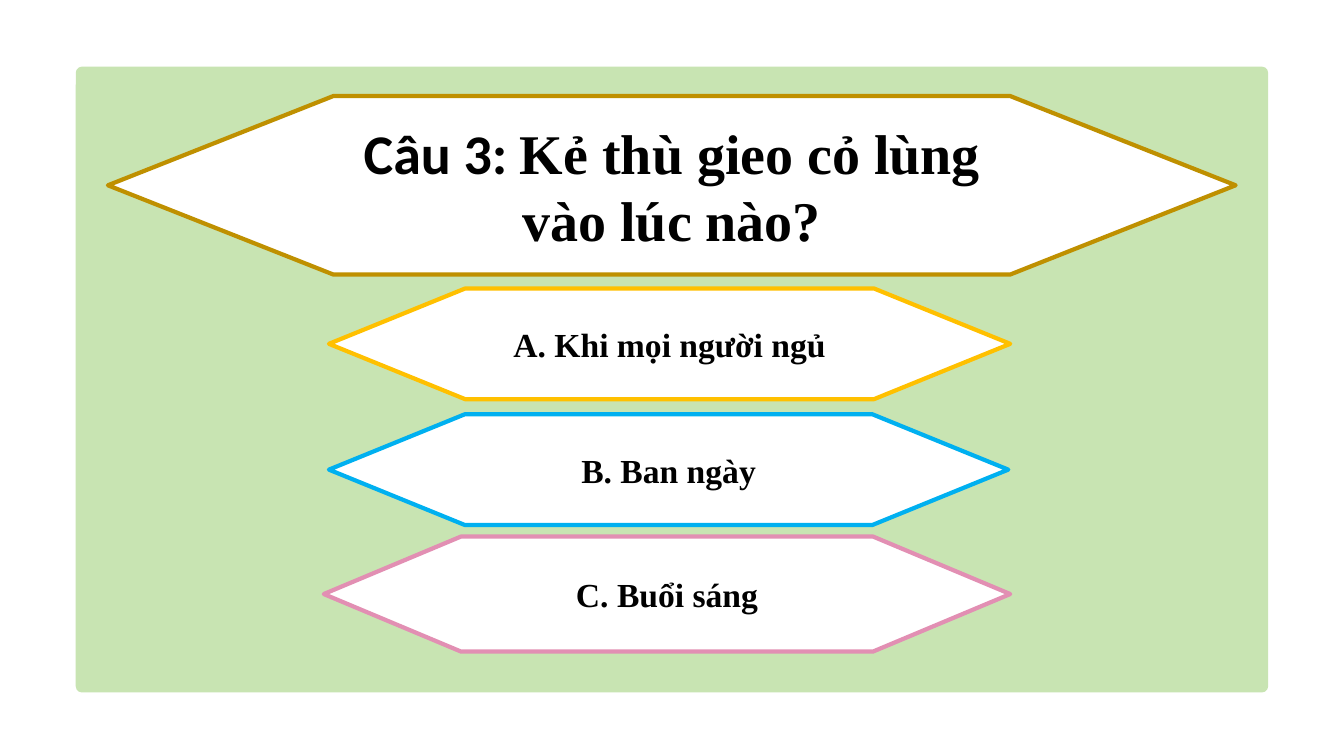
from pptx import Presentation
from pptx.dml.color import RGBColor
from pptx.enum.shapes import MSO_SHAPE
from pptx.enum.text import MSO_ANCHOR, MSO_AUTO_SIZE, PP_ALIGN
from pptx.util import Cm, Pt

COLORS = {
    "panel": "C8E4B2", "white": "FFFFFF", "text": "000000",
    "question": "BF9000", "a": "FFC000", "b": "00B0F0", "c": "E28FB3",
}
SERIF = "Times New Roman"
PANEL = (1.91, 1.68, 30.05, 15.77)
QUESTION = [("Câu 3: ", "Calibri"), ("Kẻ thù gieo cỏ lùng vào lúc nào?", SERIF)]
# text, colour, then left, top, width and height within the panel
ANSWERS = [
    ("A. Khi mọi người ngủ", "a", (6.38, 5.59, 17.17, 2.79)),
    ("B. Ban ngày", "b", (6.38, 8.76, 17.12, 2.79)),
    ("C. Buổi sáng", "c", (6.25, 11.84, 17.3, 2.9)),
]


def rgb(name):
    return RGBColor.from_string(COLORS[name])


def inside(box, part):
    """Shift a part given relative to a box into slide coordinates."""
    return (box[0] + part[0], box[1] + part[1], part[2], part[3])


def add_shape(s, kind, box, fill, line=None):
    sp = s.shapes.add_shape(kind, *map(Cm, box))
    sp.shadow.inherit = False
    sp.fill.solid()
    sp.fill.fore_color.rgb = rgb(fill)
    if line:
        sp.line.color.rgb = rgb(line)
        sp.line.width = Pt(3)
    else:
        sp.line.fill.background()
    return sp


def write(sp, *runs, size, color="text", bold=True):
    """Fill a shape with one centred paragraph of (text, font) runs."""
    tf = sp.text_frame
    tf.word_wrap = True
    tf.auto_size = MSO_AUTO_SIZE.NONE
    tf.vertical_anchor = MSO_ANCHOR.MIDDLE
    p = tf.paragraphs[0]
    p.alignment = PP_ALIGN.CENTER
    p.line_spacing = 1.0
    p.space_before = Pt(0)
    for text, font in runs:
        r = p.add_run()
        r.text = text
        r.font.name = font
        r.font.size = Pt(size)
        r.font.bold = bold
        r.font.color.rgb = rgb(color)


def add_question(s, box):
    add_shape(s, MSO_SHAPE.FLOWCHART_PREPARATION, box, "white", "question")
    left, top, width, height = box
    title = s.shapes.title
    title.left, title.top = Cm(left + width / 5), Cm(top)
    title.width, title.height = Cm(width * 3 / 5), Cm(height)
    write(title, *QUESTION, size=40)
    # Bring the title in front of its frame
    s.shapes._spTree.append(title._element)


def add_answers(s, box):
    for text, color, part in ANSWERS:
        sp = add_shape(s, MSO_SHAPE.FLOWCHART_PREPARATION, inside(box, part),
                       "white", color)
        write(sp, (text, SERIF), size=24)


def add_quiz_slide(prs, box):
    s = prs.slides.add_slide(prs.slide_layouts[5])
    panel = add_shape(s, MSO_SHAPE.ROUNDED_RECTANGLE, box, "panel")
    panel.adjustments[0] = 0.01
    add_question(s, inside(box, (0.81, 0.74, 28.42, 4.5)))
    add_answers(s, box)


def main():
    prs = Presentation()
    prs.slide_width, prs.slide_height = Cm(33.87), Cm(19.05)
    add_quiz_slide(prs, PANEL)
    prs.save("out.pptx")


if __name__ == "__main__":
    main()
